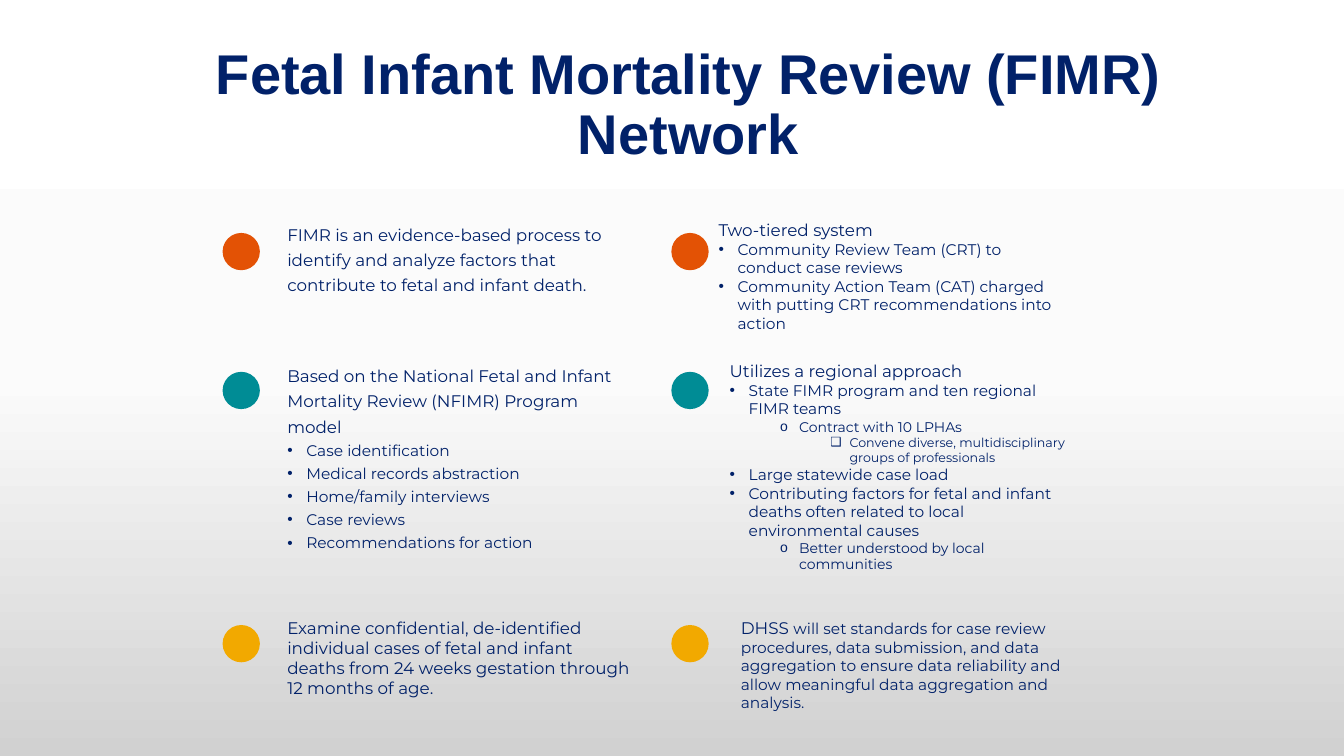
"""Build the slide on the Fetal Infant Mortality Review network."""
from copy import deepcopy

from lxml.etree import SubElement
from pptx import Presentation
from pptx.dml.color import RGBColor
from pptx.enum.shapes import MSO_SHAPE as Shape
from pptx.enum.text import MSO_ANCHOR as Anchor, MSO_AUTO_SIZE as AutoSize, PP_ALIGN as Align
from pptx.oxml.ns import qn
from pptx.util import Cm, Pt

COLORS = {"navy": "012169", "orange": "E35205", "teal": "008C95", "gold": "F2A900"}
BACKDROP = [(0, "FFFFFF"), (0.5, "FBFBFB"), (1, "D1D1D1")]
BULLETS = "•o❑"

ROWS = [("orange", 5.87, 5.41), ("teal", 9.37, 8.97), ("gold", 15.75, 15.44)]
DOT_COLUMNS = [5.61, 16.92]
TEXT_COLUMNS = [(6.99, 0), (17.86, 0.28)]

# Each paragraph is (bullet level or None, [(text, size), ...]).
PROCESS = [(None, [("FIMR is an evidence-based process to identify and analyze factors "
                    "that contribute to fetal and infant death.", 12)])]
MODEL = [
    (None, [("Based on the National Fetal and Infant Mortality Review (NFIMR) Program model", 12)]),
    (0, [("Case identification", 11)]),
    (0, [("Medical records abstraction", 11)]),
    (0, [("Home/family interviews", 11)]),
    (0, [("Case reviews", 11)]),
    (0, [("Recommendations for action", 11)]),
]
EXAMINE = [(None, [("Examine confidential, de-identified individual cases of fetal and infant "
                    "deaths from 24 weeks gestation through 12 months of age.", 12)])]
TIERS = [
    (None, [("Two-tiered system", 12)]),
    (0, [("Community Review Team (CRT) to conduct case reviews", 11)]),
    (0, [("Community Action Team (CAT) charged with putting CRT recommendations into action", 11)]),
]
REGIONS = [
    (None, [("Utilizes a regional approach", 12)]),
    (0, [("State FIMR program and ten regional FIMR teams", 11)]),
    (1, [("Contract with 10 LPHAs", 10)]),
    (2, [("Convene diverse, multidisciplinary groups of professionals", 9)]),
    (0, [("Large statewide case load", 11)]),
    (0, [("Contributing factors for fetal and infant deaths often related to local "
          "environmental causes", 11)]),
    (1, [("Better understood by local communities", 10)]),
]
STANDARDS = [(None, [("DHSS ", 12),
                     ("will set standards for case review procedures, data submission, and data "
                      "aggregation to ensure data reliability and allow meaningful data "
                      "aggregation and analysis.", 11)])]
TOPICS = [
    [(PROCESS, 2.13, 1.25), (MODEL, 5.08, 1.25), (EXAMINE, 2.31, 1.0)],
    [(TIERS, 3.12, 1.0), (REGIONS, 5.64, 1.0), (STANDARDS, 2.64, 1.0)],
]


class SlideBuilder:
    """Hold the style and the current slide."""

    def __init__(self, slide, font="Montserrat", color="navy"):
        self.slide, self.font, self.color = slide, font, color

    def backdrop(self, stops):
        """Fill the background with a vertical gradient."""
        fill = self.slide.background.fill
        fill.gradient()
        fill.gradient_angle = 270
        stop_list = fill.gradient_stops[0]._gs.getparent()
        stop_list.append(deepcopy(stop_list[-1]))
        for stop, (position, color) in zip(fill.gradient_stops, stops):
            stop.position = position
            stop.color.rgb = RGBColor.from_string(color)

    def run(self, paragraph, text, size, font=None, bold=False):
        """Add one styled run."""
        run = paragraph.add_run()
        run.text = text
        run.font.name = font or self.font
        run.font.size = Pt(size)
        run.font.bold = bold
        run.font.color.rgb = RGBColor.from_string(COLORS[self.color])

    def title(self, text, left, top, width, height):
        """Place and format the title placeholder."""
        title = self.slide.shapes.title
        title.left, title.top, title.width, title.height = map(Cm, (left, top, width, height))
        frame = title.text_frame
        frame.word_wrap, frame.auto_size = True, AutoSize.NONE
        frame.vertical_anchor = Anchor.MIDDLE
        paragraph = frame.paragraphs[0]
        paragraph.alignment, paragraph.line_spacing = Align.CENTER, 0.9
        self.run(paragraph, text, 40, "Arial", True)

    def dot(self, left, top, color, diameter=0.94):
        """Draw a plain coloured circle."""
        dot = self.slide.shapes.add_shape(Shape.OVAL, *map(Cm, (left, top, diameter, diameter)))
        dot.shadow.inherit = False
        dot.fill.solid()
        dot.fill.fore_color.rgb = RGBColor.from_string(COLORS[color])
        dot.line.fill.background()

    def bullet(self, paragraph, level):
        """Give a paragraph the bullet and indent of its level."""
        paragraph.level = level
        properties = paragraph._p.get_or_add_pPr()
        properties.set("marL", str(Cm(0.48 + 1.27 * level)))
        properties.set("indent", str(Cm(-0.48)))
        SubElement(properties, qn("a:buFont")).set("typeface", "Arial")
        SubElement(properties, qn("a:buChar")).set("char", BULLETS[level])

    def topic(self, paragraphs, left, top, height, spacing, width=9.25):
        """Write a heading with its bulleted points."""
        box = self.slide.shapes.add_textbox(*map(Cm, (left, top, width, height)))
        frame = box.text_frame
        frame.word_wrap, frame.auto_size = True, AutoSize.SHAPE_TO_FIT_TEXT
        for index, (level, runs) in enumerate(paragraphs):
            paragraph = frame.add_paragraph() if index else frame.paragraphs[0]
            paragraph.line_spacing = spacing
            if level is not None:
                self.bullet(paragraph, level)
            for text, size in runs:
                self.run(paragraph, text, size)


def main():
    """Build and save the deck."""
    deck = Presentation()
    deck.slide_width, deck.slide_height = Cm(33.87), Cm(19.05)
    builder = SlideBuilder(deck.slides.add_slide(deck.slide_layouts[5]))
    builder.backdrop(BACKDROP)
    builder.title("Fetal Infant Mortality Review (FIMR) Network", 2.74, 1.45, 29.21, 2.46)
    for dot_left, (text_left, step), topics in zip(DOT_COLUMNS, TEXT_COLUMNS, TOPICS):
        for row, ((color, dot_top, text_top), topic) in enumerate(zip(ROWS, topics)):
            paragraphs, height, spacing = topic
            builder.dot(dot_left, dot_top, color)
            builder.topic(paragraphs, text_left + step * row, text_top, height, spacing)
    deck.save("out.pptx")


if __name__ == "__main__":
    main()
